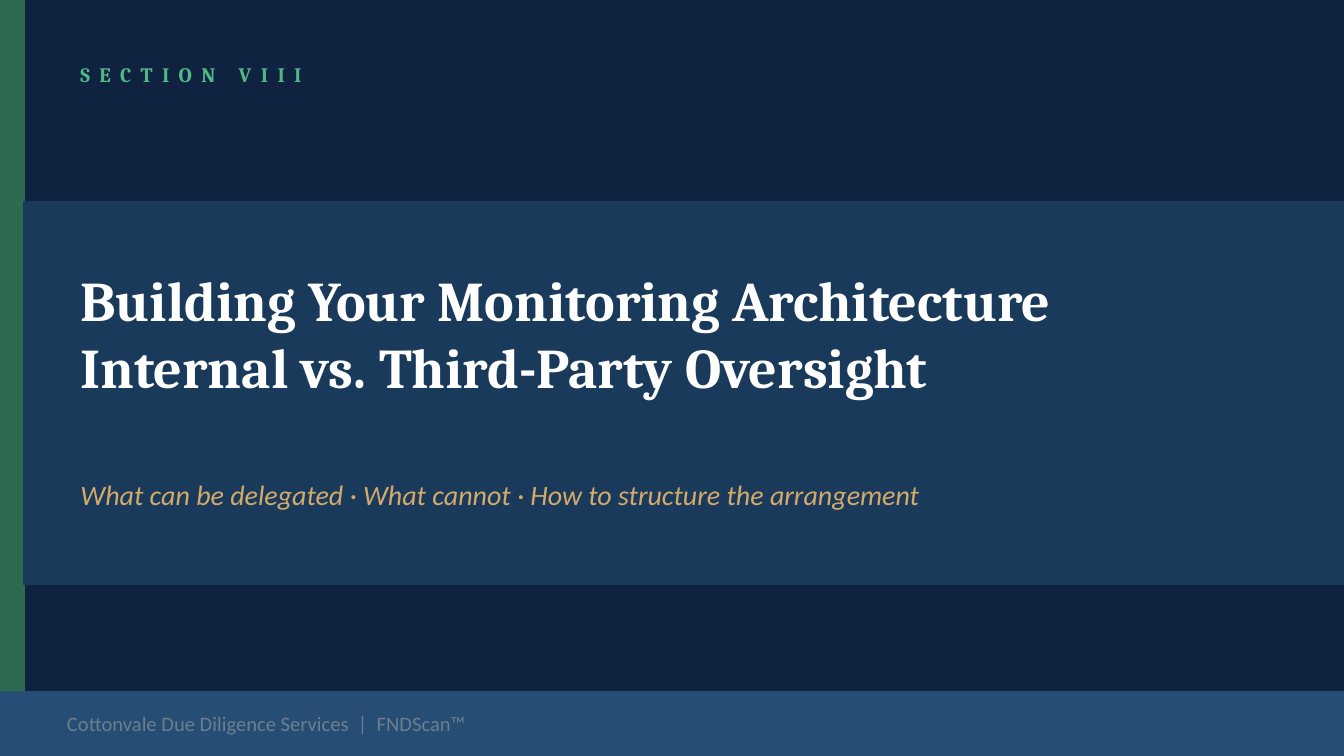
from pptx import Presentation
from pptx.dml.color import RGBColor
from pptx.enum.shapes import MSO_SHAPE as Shape
from pptx.enum.text import MSO_ANCHOR as Anchor
from pptx.util import Inches, Pt

WIDE = 10
HIGH = WIDE * 9 / 16
EDGE = 0.18
FOOT = 5.15


def paint(fmt, color):
    fmt.solid()
    fmt.fore_color.rgb = RGBColor.from_string(color)


def add_bar(slide, box, color):
    bar = slide.shapes.add_shape(Shape.RECTANGLE, *map(Inches, box))
    bar.shadow.inherit = False
    paint(bar.fill, color)
    paint(bar.line.fill, color)
    bar.line.width = Pt(1)


def add_text(slide, box, lines, color, style, gap=None):
    """Add one paragraph per line; gap is letter spacing in points."""
    frame = slide.shapes.add_textbox(*map(Inches, box)).text_frame
    frame.word_wrap = True
    frame.vertical_anchor = Anchor.MIDDLE
    frame.text = "\n".join(lines)
    for para in frame.paragraphs:
        for run in para.runs:
            for name, value in style.items():
                setattr(run.font, name, value)
            paint(run.font.fill, color)
            if gap:
                run._r.get_or_add_rPr().set("spc", str(gap * 100))


def main():
    deck = Presentation()
    deck.slide_width, deck.slide_height = Inches(WIDE), Inches(HIGH)
    slide = deck.slides.add_slide(deck.slide_layouts[6])
    paint(slide.background.fill, "0F2340")

    add_bar(slide, (0, 0, EDGE, HIGH), "2D6A4F")
    add_bar(slide, (EDGE, 1.5, WIDE - EDGE, 2.85), "1A3A5C")
    add_text(slide, (0.5, 0.35, 9, 0.4), ["SECTION VIII"], "52B788",
             {"name": "Cambria", "size": Pt(11), "bold": True}, gap=5)
    add_text(slide, (0.5, 1.65, 9, 1.65),
             ["Building Your Monitoring Architecture",
              "Internal vs. Third-Party Oversight"], "FFFFFF",
             {"name": "Cambria", "size": Pt(30), "bold": True})
    add_text(slide, (0.5, 3.4, 9, 0.55),
             ["What can be delegated · What cannot · How to structure the arrangement"],
             "D4A96A", {"name": "Calibri", "size": Pt(15), "italic": True})
    add_bar(slide, (0, FOOT, WIDE, HIGH - FOOT), "264D73")
    add_text(slide, (0.4, 5.22, 9, 0.33),
             ["Cottonvale Due Diligence Services  |  FNDScan™"],
             "6B7F8F", {"name": "Calibri", "size": Pt(11)})

    deck.save("out.pptx")


if __name__ == "__main__":
    main()
